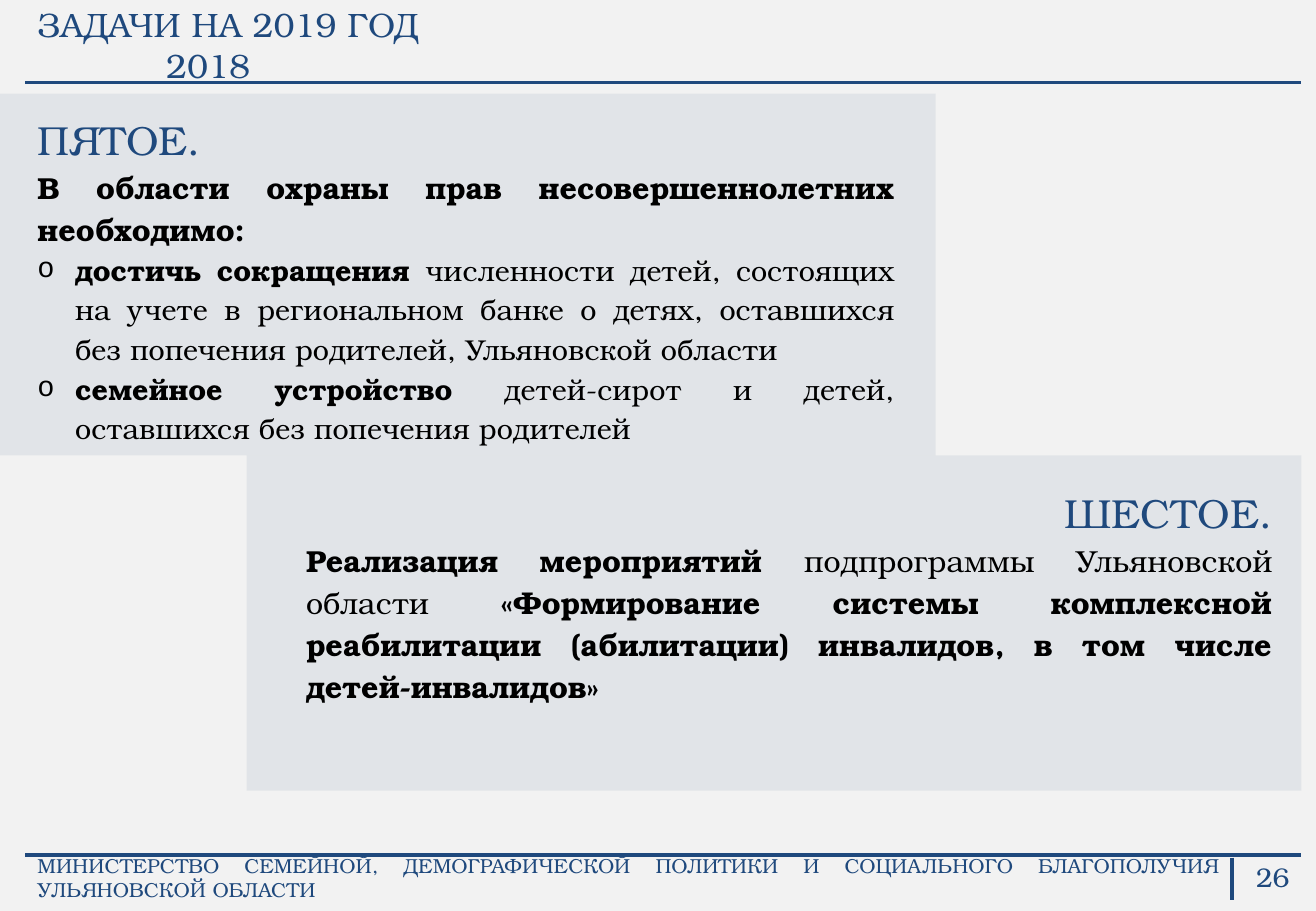
from pptx import Presentation, util as u
from pptx.dml.color import RGBColor
from pptx.enum import shapes, text
from pptx.oxml import parse_xml
from pptx.oxml.ns import nsdecls, qn
from lxml import etree

theme = dict(
    back=RGBColor(0xF2, 0xF2, 0xF2),
    navy=RGBColor(0x1F, 0x49, 0x7D),
    black=RGBColor(0, 0, 0),
    alpha=8,
    font="TeX Gyre Bonum",
    mark="Courier New",
    head=24, lead=18, item=17, title=20, foot=12, page=16,
)
left, right = text.PP_ALIGN.LEFT, text.PP_ALIGN.RIGHT
just = text.PP_ALIGN.JUSTIFY
middle, top = text.MSO_ANCHOR.MIDDLE, text.MSO_ANCHOR.TOP

deck = Presentation()
deck.slide_width, deck.slide_height = u.Inches(10.83), u.Inches(7.5)
slide = deck.slides.add_slide(deck.slide_layouts[6])
slide.background.fill.solid()
slide.background.fill.fore_color.rgb = theme["back"]


def add_text(area, anchor, paras):
    box = slide.shapes.add_textbox(*map(u.Inches, area))
    frame = box.text_frame
    fit = text.MSO_AUTO_SIZE.SHAPE_TO_FIT_TEXT if anchor == top else text.MSO_AUTO_SIZE.NONE
    form = dict(word_wrap=True, auto_size=fit, vertical_anchor=anchor)
    for key, value in form.items():
        setattr(frame, key, value)
    for i, (align, size, color, runs, indent) in enumerate(paras):
        para = frame.add_paragraph() if i else frame.paragraphs[0]
        para.alignment = align
        if anchor == top:
            para.line_spacing = 1.15
        props = para._p.get_or_add_pPr()
        if indent:
            props.set("marL", str(u.Inches(indent)))
        if size == "item":
            props.set("indent", str(-u.Inches(indent)))
            etree.SubElement(props, qn("a:buFont")).set("typeface", theme["mark"])
            etree.SubElement(props, qn("a:buChar")).set("char", "o")
        for words, bold in runs:
            run = para.add_run()
            run.text = words
            run.font.color.rgb = theme[color]
            form = dict(name=theme["font"], size=u.Pt(theme[size]), bold=bold)
            for key, value in form.items():
                setattr(run.font, key, value)


for area in [(2.03, 3.75, 8.68, 2.76), (0, 0.77, 7.7, 2.98)]:
    panel = slide.shapes.add_shape(shapes.MSO_SHAPE.RECTANGLE, *map(u.Inches, area))
    panel.shadow.inherit = False
    panel.line.fill.background()
    panel.fill.solid()
    panel.fill.fore_color.rgb = theme["navy"]
    tint = panel._element.spPr.find(".//" + qn("a:srgbClr"))
    etree.SubElement(tint, qn("a:alpha")).set("val", str(theme["alpha"] * 1000))

for ends in [(0.21, 0.68, 10.71, 0.68), (0.21, 7.04, 10.71, 7.04), (10.14, 7.06, 10.14, 7.41)]:
    rule = slide.shapes.add_connector(shapes.MSO_CONNECTOR.STRAIGHT, *map(u.Inches, ends))
    rule.line.color.rgb = theme["navy"]
    rule.line.width = u.Pt(2)
    rule._element.spPr.append(parse_xml(f"<a:effectLst {nsdecls('a')}/>"))

add_text((0.21, 0.21, 10.49, 0.31), middle, [
    (left, "title", "navy", [("ЗАДАЧИ НА 2019 ГОД", False)], 0),
    (left, "title", "navy", [("2018", False)], 1.06),
])
add_text((0.21, 0.84, 7.25, 2.56), top, [
    (just, "head", "navy", [("ПЯТОЕ.", False)], 0),
    (just, "lead", "black", [("В области охраны прав несовершеннолетних необходимо:", True)], 0),
    (just, "item", "black", [
        ("достичь сокращения ", True),
        ("численности детей, состоящих на учете в региональном банке о детях, "
         "оставшихся без попечения родителей, Ульяновской области", False),
    ], 0.31),
    (just, "item", "black", [
        ("семейное устройство", True),
        (" детей-сирот и детей, оставшихся без попечения родителей", False),
    ], 0.31),
])
add_text((2.42, 3.91, 8.15, 1.61), top, [
    (right, "head", "navy", [("ШЕСТОЕ.", False)], 0),
    (just, "lead", "black", [
        ("Реализация мероприятий ", True),
        ("подпрограммы Ульяновской области ", False),
        ("«Формирование системы комплексной реабилитации (абилитации) инвалидов, "
         "в том числе детей-инвалидов»", True),
    ], 0),
])
add_text((0.21, 7.06, 9.93, 0.33), middle, [
    (just, "foot", "navy", [
        ("МИНИСТЕРСТВО СЕМЕЙНОЙ, ДЕМОГРАФИЧЕСКОЙ ПОЛИТИКИ И СОЦИАЛЬНОГО "
         "БЛАГОПОЛУЧИЯ УЛЬЯНОВСКОЙ ОБЛАСТИ", False),
    ], 0),
])
add_text((10.11, 7.02, 0.6, 0.4), middle, [(right, "page", "navy", [("26", False)], 0)])

deck.save("out.pptx")
